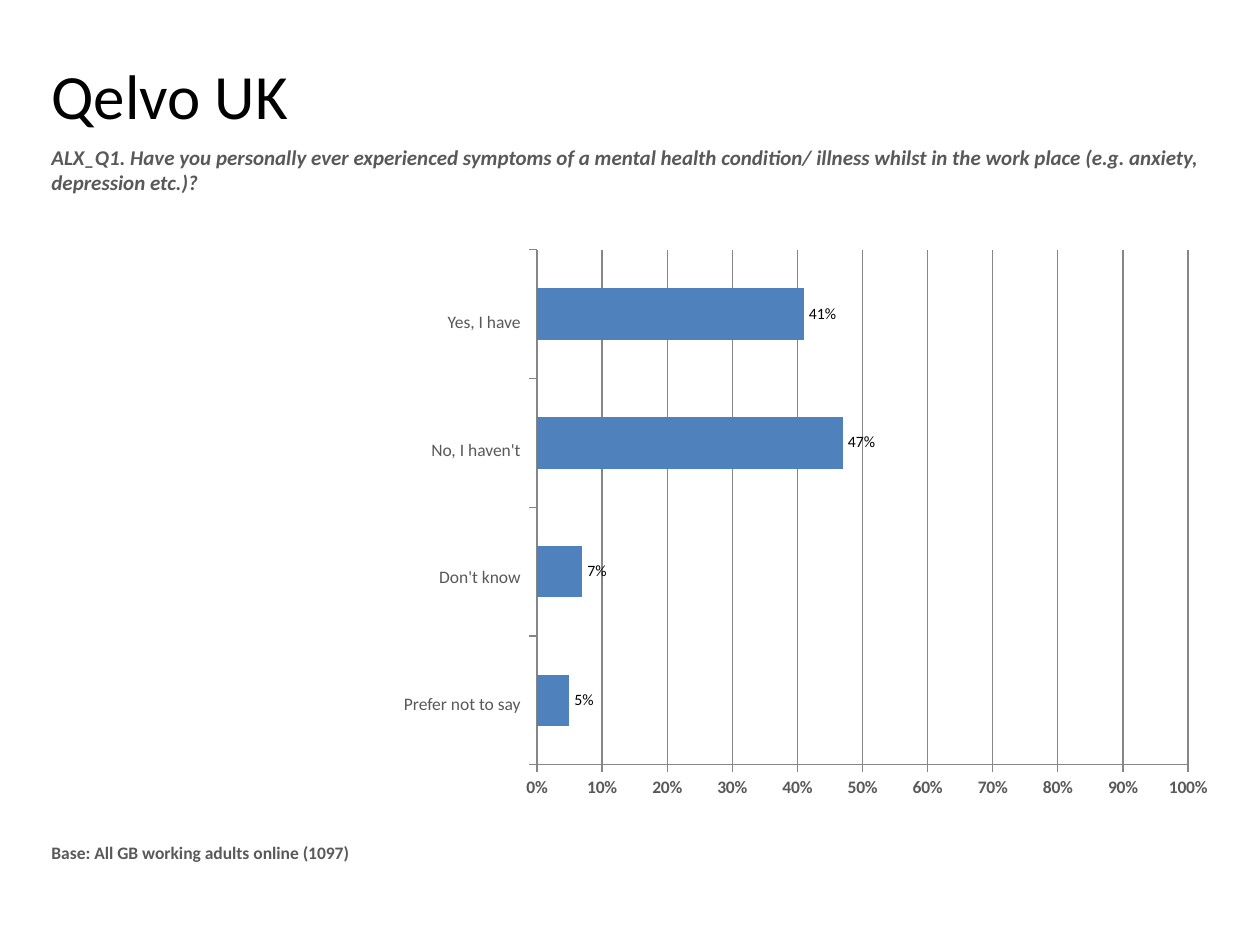
from pptx import Presentation
from pptx.chart.data import CategoryChartData
from pptx.dml.color import RGBColor
from pptx.enum import chart as ch, text
from pptx.oxml import parse_xml
from pptx.oxml.ns import nsdecls, qn
from pptx.util import Inches, Pt

FONT = "Calibri"
BLACK = RGBColor(0x00, 0x00, 0x00)
GREY = RGBColor(0x59, 0x59, 0x59)
BLUE = RGBColor(0x4F, 0x81, 0xBD)
LINE = RGBColor(0x86, 0x86, 0x86)
ANSWERS = [("Yes, I have", 0.41), ("No, I haven't", 0.47),
           ("Don't know", 0.07), ("Prefer not to say", 0.05)]
PLOT_LAYOUT = {"x": 0.034, "y": 0.02, "w": 0.918, "h": 0.903}


def style_font(font, size, color, bold=False, italic=False):
    """Set the face, size, colour and weight of a font."""
    font.name, font.size = FONT, Pt(size)
    font.bold, font.italic = bold, italic
    font.color.rgb = color


def add_text(s, box, content, size, color=GREY, bold=False, italic=False,
             anchor=text.MSO_ANCHOR.TOP, align=text.PP_ALIGN.LEFT):
    """Add a wrapped text box with one paragraph."""
    tf = s.shapes.add_textbox(*map(Inches, box)).text_frame
    tf.word_wrap = True
    tf.vertical_anchor = anchor
    p = tf.paragraphs[0]
    p.text = content
    p.alignment = align
    style_font(p.runs[0].font, size, color, bold, italic)


def set_plot_layout(chart):
    """Fix the inner plot area as fractions of the chart."""
    plot_area = chart.element.find(".//" + qn("c:plotArea"))
    old = plot_area.find(qn("c:layout"))
    if old is not None:
        plot_area.remove(old)
    modes = '<c:xMode val="edge"/><c:yMode val="edge"/>'
    sizes = "".join(f'<c:{k} val="{v}"/>' for k, v in PLOT_LAYOUT.items())
    plot_area.insert(0, parse_xml(
        f'<c:layout {nsdecls("c")}><c:manualLayout>'
        f'<c:layoutTarget val="inner"/>{modes}{sizes}'
        f'</c:manualLayout></c:layout>'))


def style_axes(chart):
    """Format the category and percentage axes."""
    cat, val = chart.category_axis, chart.value_axis
    cat.tick_label_position = ch.XL_TICK_LABEL_POSITION.NONE
    val.tick_label_position = ch.XL_TICK_LABEL_POSITION.LOW
    val.minimum_scale, val.maximum_scale, val.major_unit = 0, 1, 0.1
    val.has_major_gridlines = True
    val.major_gridlines.format.line.color.rgb = LINE
    val.tick_labels.number_format = "0%"
    val.tick_labels.number_format_is_linked = False
    for axis in (cat, val):
        axis.major_tick_mark = ch.XL_TICK_MARK.OUTSIDE
        axis.format.line.color.rgb = LINE
        style_font(axis.tick_labels.font, 10, GREY, bold=axis is val)


def add_bar_chart(s, box):
    """Add the answers as horizontal bars, the first answer on top."""
    data = CategoryChartData(number_format="0%")
    data.categories = [str(i + 1) for i in range(len(ANSWERS))]
    data.add_series("Series 1", [share for _, share in reversed(ANSWERS)])
    chart = s.shapes.add_chart(ch.XL_CHART_TYPE.BAR_CLUSTERED,
                               *map(Inches, box), data).chart
    chart.has_legend = chart.has_title = False
    style_font(chart.font, 18, BLACK)
    plot = chart.plots[0]
    plot.gap_width, plot.overlap = 150, -10
    plot.vary_by_categories = False
    fill = plot.series[0].format.fill
    fill.solid()
    fill.fore_color.rgb = BLUE
    labels = plot.series[0].data_labels
    labels.show_value = True
    labels.position = ch.XL_LABEL_POSITION.OUTSIDE_END
    labels.number_format = "0%"
    labels.number_format_is_linked = False
    style_font(labels.font, 9, BLACK)
    style_axes(chart)
    set_plot_layout(chart)


def add_answer_labels(s, left, top, width, height):
    """Stack the answer texts beside the bars."""
    for i, (answer, _) in enumerate(ANSWERS):
        add_text(s, (left, top + i * height, width, height), answer, 10,
                 anchor=text.MSO_ANCHOR.MIDDLE, align=text.PP_ALIGN.RIGHT)


def main():
    """Build the survey slide and save it."""
    prs = Presentation()
    prs.slide_width, prs.slide_height = Inches(10), Inches(7.5)
    s = prs.slides.add_slide(prs.slide_layouts[6])
    add_text(s, (0.31, 0.34, 9.38, 0.76), "Qelvo UK", 36, BLACK,
             anchor=text.MSO_ANCHOR.BOTTOM)
    add_text(s, (0.31, 1.1, 9.39, 0.51),
             "ALX_Q1. Have you personally ever experienced symptoms of a "
             "mental health condition/ illness whilst in the work place "
             "(e.g. anxiety, depression etc.)?", 12, bold=True, italic=True)
    add_bar_chart(s, (4.07, 1.89, 5.63, 4.53))
    add_answer_labels(s, 0.16, 2.05, 4.07, 1.01)
    add_text(s, (0.31, 6.63, 9.39, 0.43),
             "Base: All GB working adults online (1097)", 10, bold=True)
    prs.save("out.pptx")


if __name__ == "__main__":
    main()
